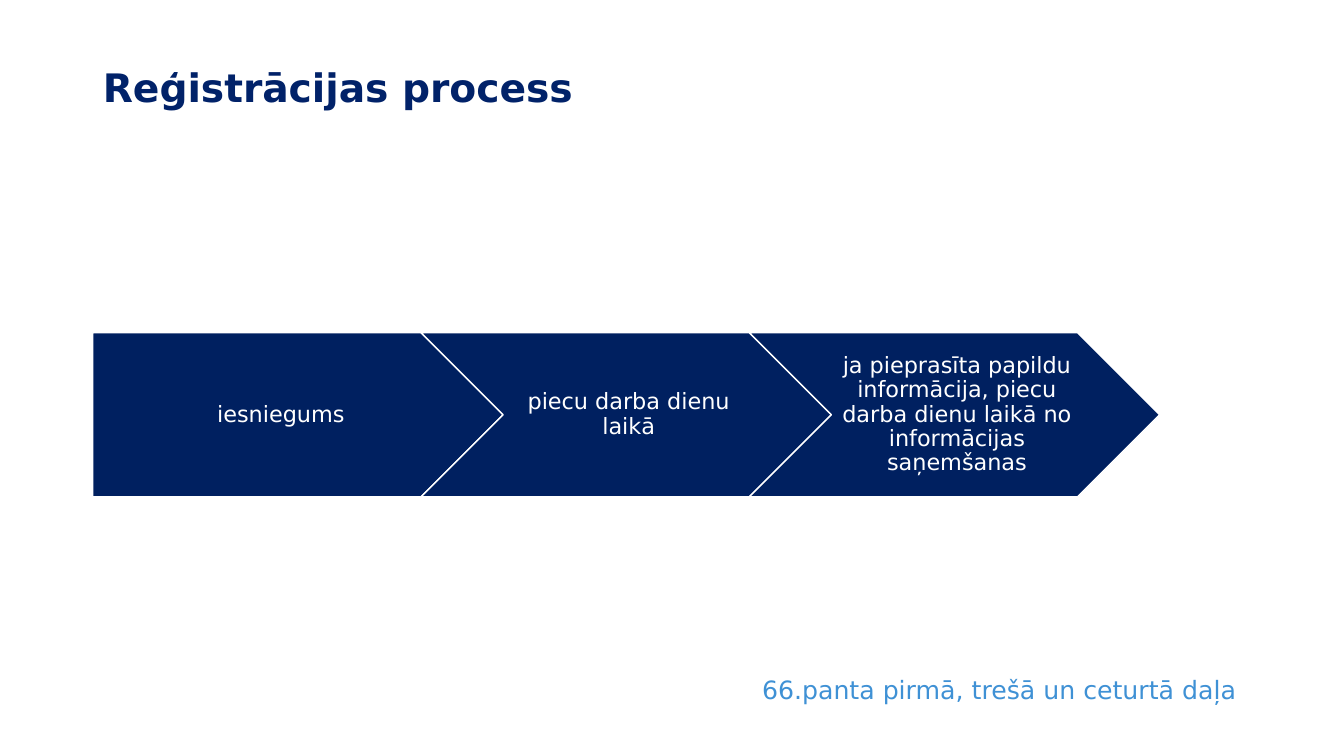
from pptx import Presentation
from pptx.dml.color import RGBColor
from pptx.enum.shapes import MSO_SHAPE
from pptx.enum.text import MSO_ANCHOR, MSO_AUTO_SIZE, PP_ALIGN
from pptx.util import Inches, Pt

STEPS = [
    "iesniegums",
    "piecu darba dienu laikā",
    "ja pieprasīta papildu informācija, piecu darba dienu laikā no informācijas saņemšanas",
]
STEP_LEFT, STEP_TOP, STEP_WIDTH, STEP_HEIGHT = 0.92, 3.3, 4.07, 1.63
STEP_PITCH = 0.8 * STEP_WIDTH


def color(hex_code):
    return RGBColor.from_string(hex_code)


class ProcessSlide:
    font_name = "DejaVu Sans"
    navy = "002060"
    white = "FFFFFF"
    title_color = "012269"
    note_color = "3F91D5"

    def __init__(self, deck):
        self.slide = deck.slides.add_slide(deck.slide_layouts[5])

    def set_text(self, frame, text, size, hex_code, align=PP_ALIGN.LEFT, bold=False, spacing=1.0):
        frame.word_wrap = True
        frame.text = text
        para = frame.paragraphs[0]
        para.alignment = align
        para.line_spacing = spacing
        font = para.runs[0].font
        font.name, font.size, font.bold = self.font_name, Pt(size), bold
        font.color.rgb = color(hex_code)

    def add_title(self, text, left, top, width, height):
        title = self.slide.shapes.title
        title.left, title.top = Inches(left), Inches(top)
        title.width, title.height = Inches(width), Inches(height)
        frame = title.text_frame
        frame.auto_size = MSO_AUTO_SIZE.NONE
        frame.vertical_anchor = MSO_ANCHOR.MIDDLE
        self.set_text(frame, text, 28, self.title_color, bold=True, spacing=0.9)

    def add_step(self, kind, text, left, left_inset):
        step = self.slide.shapes.add_shape(
            kind, Inches(left), Inches(STEP_TOP), Inches(STEP_WIDTH), Inches(STEP_HEIGHT))
        step.shadow.inherit = False
        step.fill.solid()
        step.fill.fore_color.rgb = color(self.navy)
        step.line.color.rgb = color(self.white)
        step.line.width = Pt(1)
        frame = step.text_frame
        frame.vertical_anchor = MSO_ANCHOR.MIDDLE
        frame.margin_left, frame.margin_right = Inches(left_inset), Inches(0.02)
        self.set_text(frame, text, 16, self.white, PP_ALIGN.CENTER, spacing=0.9)

    def add_note(self, text, left, top, width, height):
        box = self.slide.shapes.add_textbox(
            Inches(left), Inches(top), Inches(width), Inches(height))
        box.text_frame.auto_size = MSO_AUTO_SIZE.SHAPE_TO_FIT_TEXT
        self.set_text(box.text_frame, text, 18, self.note_color)


def main():
    deck = Presentation()
    deck.slide_width, deck.slide_height = Inches(13.33), Inches(7.5)
    page = ProcessSlide(deck)
    page.add_title("Reģistrācijas process", 0.92, 0.4, 10.58, 0.99)
    for index, text in enumerate(STEPS):
        kind, inset = (MSO_SHAPE.CHEVRON, 0.07) if index else (MSO_SHAPE.PENTAGON, 0.09)
        page.add_step(kind, text, STEP_LEFT + index * STEP_PITCH, inset)
    page.add_note("66.panta pirmā, trešā un ceturtā daļa", 7.46, 6.64, 4.96, 0.4)
    deck.save("out.pptx")


if __name__ == "__main__":
    main()
